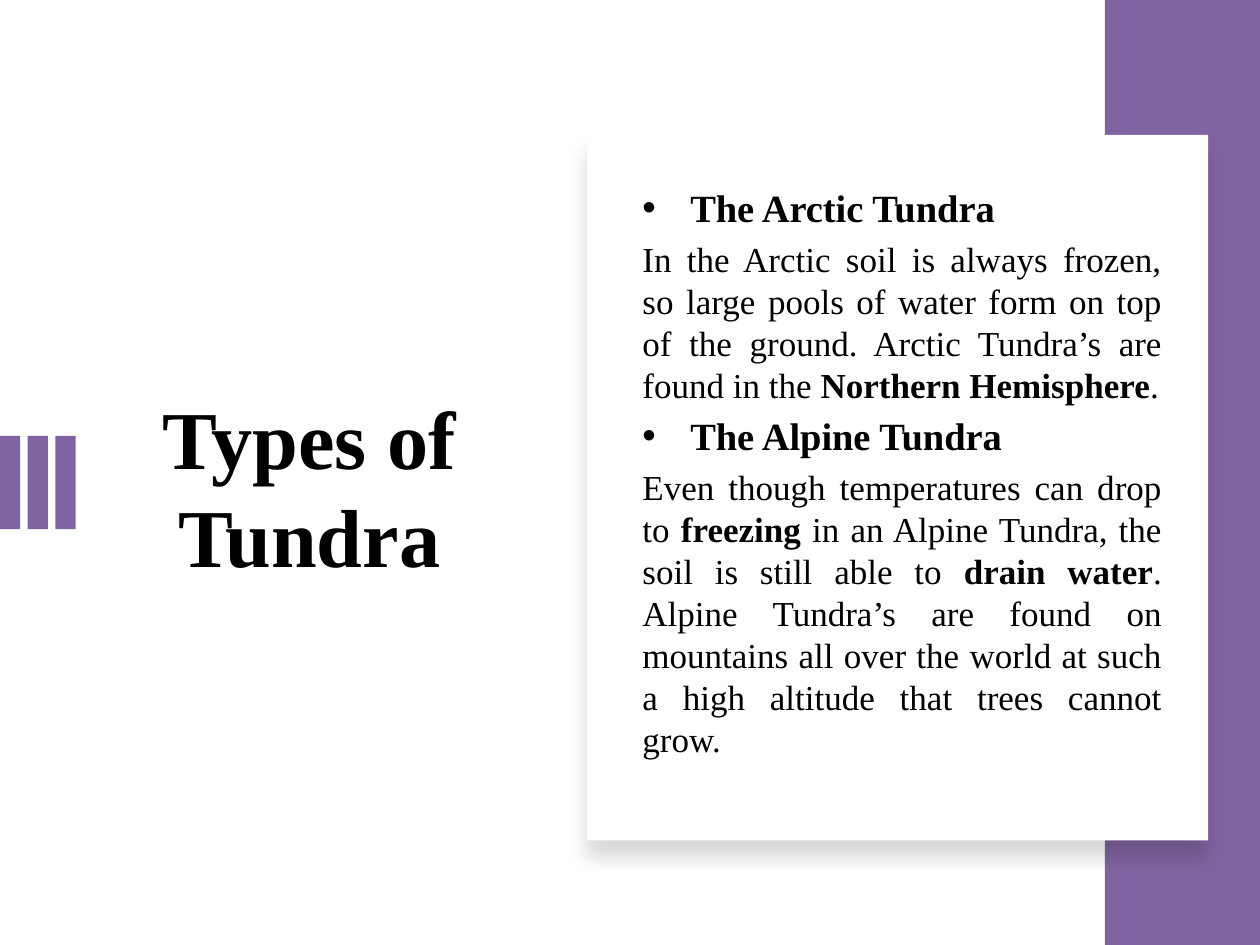
from lxml.etree import SubElement
from pptx import Presentation
from pptx.dml.color import RGBColor
from pptx.enum.shapes import MSO_SHAPE
from pptx.enum.text import MSO_ANCHOR, MSO_AUTO_SIZE, PP_ALIGN
from pptx.oxml.ns import qn
from pptx.util import Inches, Pt

COLORS = {"accent": "8064A2", "card": "FFFFFF", "text": "000000"}
FONT = "Times New Roman"
WIDTH, HEIGHT = 10, 7.5
TEXT_TOP, TEXT_HEIGHT = 1.46, 4.79
BAR_WIDTH, BAR_STEP = 0.16, 0.22

# Each section: heading, then (text, bold) runs
SECTIONS = [
    ("The Arctic Tundra", [
        ("In the Arctic soil is always frozen, so large pools of water form on top "
         "of the ground. Arctic Tundra’s are found in the ", False),
        ("Northern Hemisphere", True),
        (".", False),
    ]),
    ("The Alpine Tundra", [
        ("Even though temperatures can drop to ", False),
        ("freezing", True),
        (" in an Alpine Tundra, the soil is still able to ", False),
        ("drain water", True),
        (". Alpine Tundra’s are found on mountains all over the world at such "
         "a high altitude that trees cannot grow.", False),
    ]),
]


def add_rectangle(shapes, left, top, width, height, color):
    shape = shapes.add_shape(MSO_SHAPE.RECTANGLE, Inches(left), Inches(top),
                             Inches(width), Inches(height))
    shape.shadow.inherit = False
    shape.fill.solid()
    shape.fill.fore_color.rgb = RGBColor.from_string(COLORS[color])
    shape.line.fill.background()
    return shape


def add_soft_shadow(shape):
    """Cast a faint shadow straight down."""
    effects = shape._element.spPr.find(qn("a:effectLst"))
    shadow = SubElement(effects, qn("a:outerShdw"), blurRad=str(Pt(11)),
                        dist=str(Pt(10)), dir="5400000", algn="t", rotWithShape="0")
    color = SubElement(shadow, qn("a:srgbClr"), val=COLORS["text"])
    SubElement(color, qn("a:alpha"), val="15000")


def set_font(paragraph, size, bold=None):
    paragraph.font.name = FONT
    paragraph.font.size = Pt(size)
    paragraph.font.bold = bold
    paragraph.font.color.rgb = RGBColor.from_string(COLORS["text"])


def add_bullet(paragraph):
    properties = paragraph._p.get_or_add_pPr()
    indent = Inches(0.38)
    properties.set("marL", str(indent))
    properties.set("indent", str(-indent))
    SubElement(properties, qn("a:buFont"), typeface="Arial")
    SubElement(properties, qn("a:buChar"), char="•")


def format_title(title):
    title.left, title.top = Inches(0.86), Inches(TEXT_TOP)
    title.width, title.height = Inches(3.19), Inches(TEXT_HEIGHT)
    frame = title.text_frame
    frame.text = "Types of Tundra"
    frame.word_wrap = True
    frame.auto_size = MSO_AUTO_SIZE.NONE
    frame.vertical_anchor = MSO_ANCHOR.MIDDLE
    paragraph = frame.paragraphs[0]
    paragraph.alignment = PP_ALIGN.CENTER
    set_font(paragraph, 47, True)


def add_sections(shapes):
    box = shapes.add_textbox(Inches(5), Inches(TEXT_TOP), Inches(4.32), Inches(TEXT_HEIGHT))
    frame = box.text_frame
    frame.word_wrap = True
    frame.vertical_anchor = MSO_ANCHOR.TOP
    frame.margin_top = frame.margin_bottom = 0
    for index, (heading_text, runs) in enumerate(SECTIONS):
        heading = frame.add_paragraph() if index else frame.paragraphs[0]
        heading.text = heading_text
        if index:
            heading.space_before = Pt(4)
        add_bullet(heading)
        set_font(heading, 22, True)

        body = frame.add_paragraph()
        body.space_before = Pt(4)
        set_font(body, 20)
        for text, bold in runs:
            run = body.add_run()
            run.text = text
            run.font.bold = bold
        heading.alignment = body.alignment = PP_ALIGN.JUSTIFY


def main():
    presentation = Presentation()
    presentation.slide_width, presentation.slide_height = Inches(WIDTH), Inches(HEIGHT)
    slide = presentation.slides.add_slide(presentation.slide_layouts[5])
    format_title(slide.shapes.title)

    bars = slide.shapes.add_group_shape()
    for column in range(3):
        add_rectangle(bars.shapes, column * BAR_STEP, 3.46, BAR_WIDTH, 0.74, "accent")

    band_width = 1.23
    add_rectangle(slide.shapes, WIDTH - band_width, 0, band_width, HEIGHT, "accent")
    card = add_rectangle(slide.shapes, 4.66, 1.07, 4.93, 5.6, "card")
    add_soft_shadow(card)
    add_sections(slide.shapes)
    presentation.save("out.pptx")


if __name__ == "__main__":
    main()
